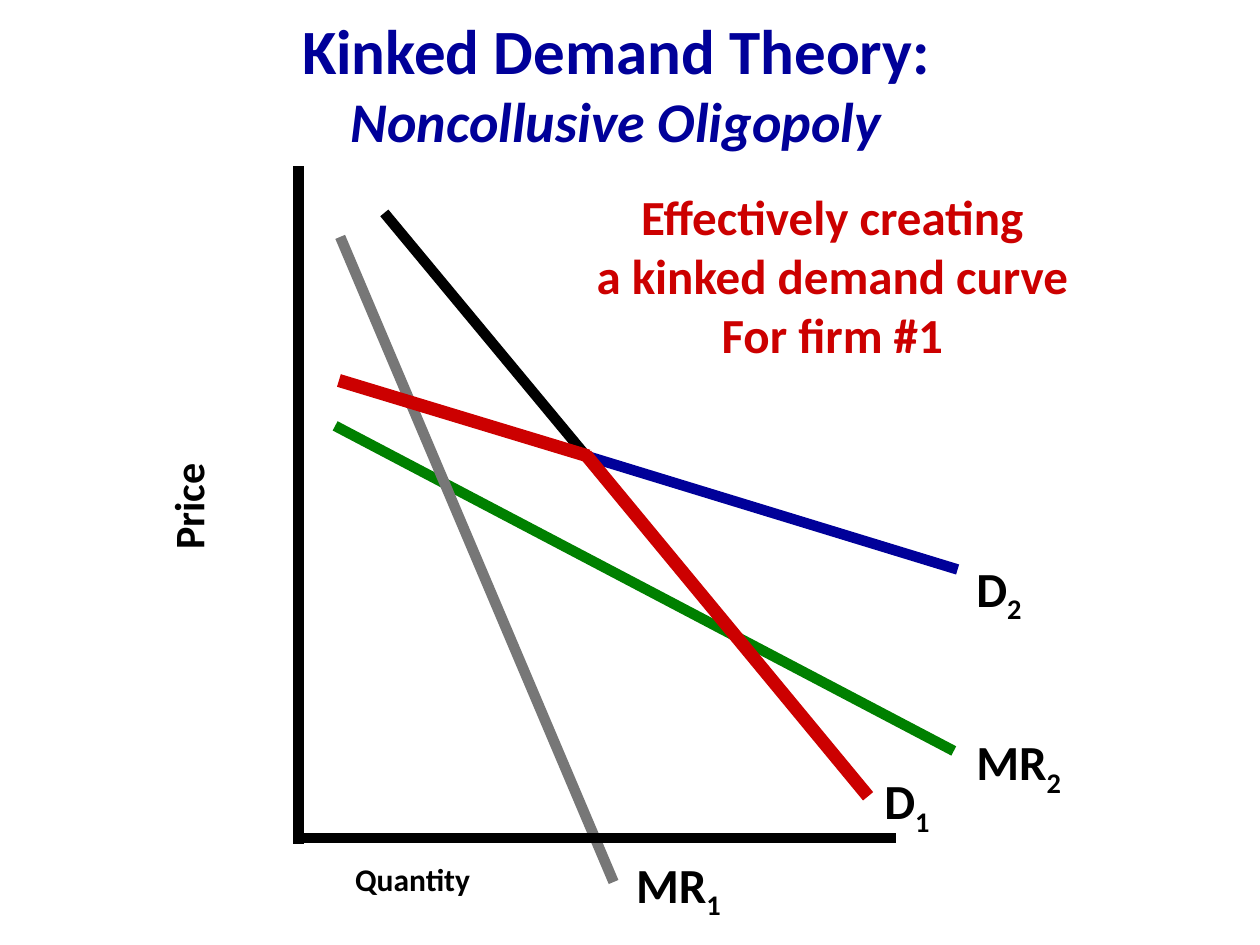
from lxml import etree
from pptx import Presentation
from pptx.dml.color import RGBColor
from pptx.enum.shapes import MSO_CONNECTOR
from pptx.enum.text import MSO_ANCHOR, PP_ALIGN
from pptx.oxml.ns import qn
from pptx.util import Inches, Pt

STRAIGHT = MSO_CONNECTOR.STRAIGHT
TOP = MSO_ANCHOR.TOP
LEFT, CENTER = PP_ALIGN.LEFT, PP_ALIGN.CENTER

FONT = "Calibri"
BLACK = RGBColor(0x00, 0x00, 0x00)
NAVY = RGBColor(0x00, 0x00, 0x99)
GREEN = RGBColor(0x00, 0x80, 0x00)
GRAY = RGBColor(0x77, 0x77, 0x77)
RED = RGBColor(0xCC, 0x00, 0x00)


def add_run(p, text, size, color):
    r = p.add_run()
    r.text = text
    r.font.name = FONT
    r.font.size = Pt(size)
    r.font.bold = True
    r.font.color.rgb = color
    return r


def add_lines(slide, lines):
    for x1, y1, x2, y2, color, width in lines:
        line = slide.shapes.add_connector(
            STRAIGHT, Inches(x1), Inches(y1), Inches(x2), Inches(y2))
        line.line.color.rgb = color
        line.line.width = Pt(width)
        etree.SubElement(line._element.spPr, qn("a:effectLst"))


prs = Presentation()
prs.slide_width, prs.slide_height = Inches(10), Inches(7.5)
s = prs.slides.add_slide(prs.slide_layouts[5])

title = s.shapes.title
title.left, title.top = Inches(2.24), Inches(0.04)
title.width, title.height = Inches(5.3), Inches(1.24)
tf = title.text_frame
tf.word_wrap = False
tf.vertical_anchor = TOP
p = tf.paragraphs[0]
p.alignment = CENTER
add_run(p, "Kinked Demand Theory:", 36, NAVY)
p = tf.add_paragraph()
p.alignment = CENTER
add_run(p, "Noncollusive Oligopoly", 32, NAVY).font.italic = True

add_lines(s, [
    (2.66, 3.38, 7.57, 5.96, GREEN, 6),
    (3.05, 1.69, 6.86, 6.28, BLACK, 6),
    (2.73, 3.03, 7.6, 4.52, NAVY, 6),
    (2.7, 1.88, 4.87, 7, GRAY, 6),
    (2.69, 3.02, 4.67, 3.62, RED, 7.5),
    (4.65, 3.61, 6.89, 6.32, RED, 7.5),
    (2.37, 1.32, 2.37, 6.7, BLACK, 6),
    (2.35, 6.65, 7.11, 6.65, BLACK, 6),
])

curve_labels = [
    ("MR", "2", 7.65, 5.76, 0.97),
    ("D", "1", 6.92, 6.07, 0.88),
    ("D", "2", 7.65, 4.38, 0.88),
    ("MR", "1", 4.95, 6.73, 0.97),
]
for name, index, x, y, w in curve_labels:
    label = s.shapes.add_textbox(Inches(x), Inches(y), Inches(w), Inches(0.56))
    label.text_frame.word_wrap = True
    p = label.text_frame.paragraphs[0]
    add_run(p, name, 28, BLACK)
    r = add_run(p, index, 28, BLACK)
    r._r.get_or_add_rPr().set("baseline", "-25000")

notes = [
    (["Quantity"], 2.72, 6.78, 1.55, 0.5, 18, BLACK, LEFT, 0),
    (["Price"], 0.98, 3.7, 1.02, 0.5, 24, BLACK, LEFT, 270),
    (["Effectively creating", "a kinked demand curve", "For firm #1"],
     4.33, 1.43, 4.55, 1.51, 28, RED, CENTER, 0),
]
for texts, x, y, w, h, size, color, align, angle in notes:
    box = s.shapes.add_textbox(Inches(x), Inches(y), Inches(w), Inches(h))
    box.rotation = angle
    tf = box.text_frame
    tf.word_wrap = True
    for i, text in enumerate(texts):
        p = tf.add_paragraph() if i else tf.paragraphs[0]
        p.alignment = align
        add_run(p, text, size, color)

prs.save("out.pptx")
